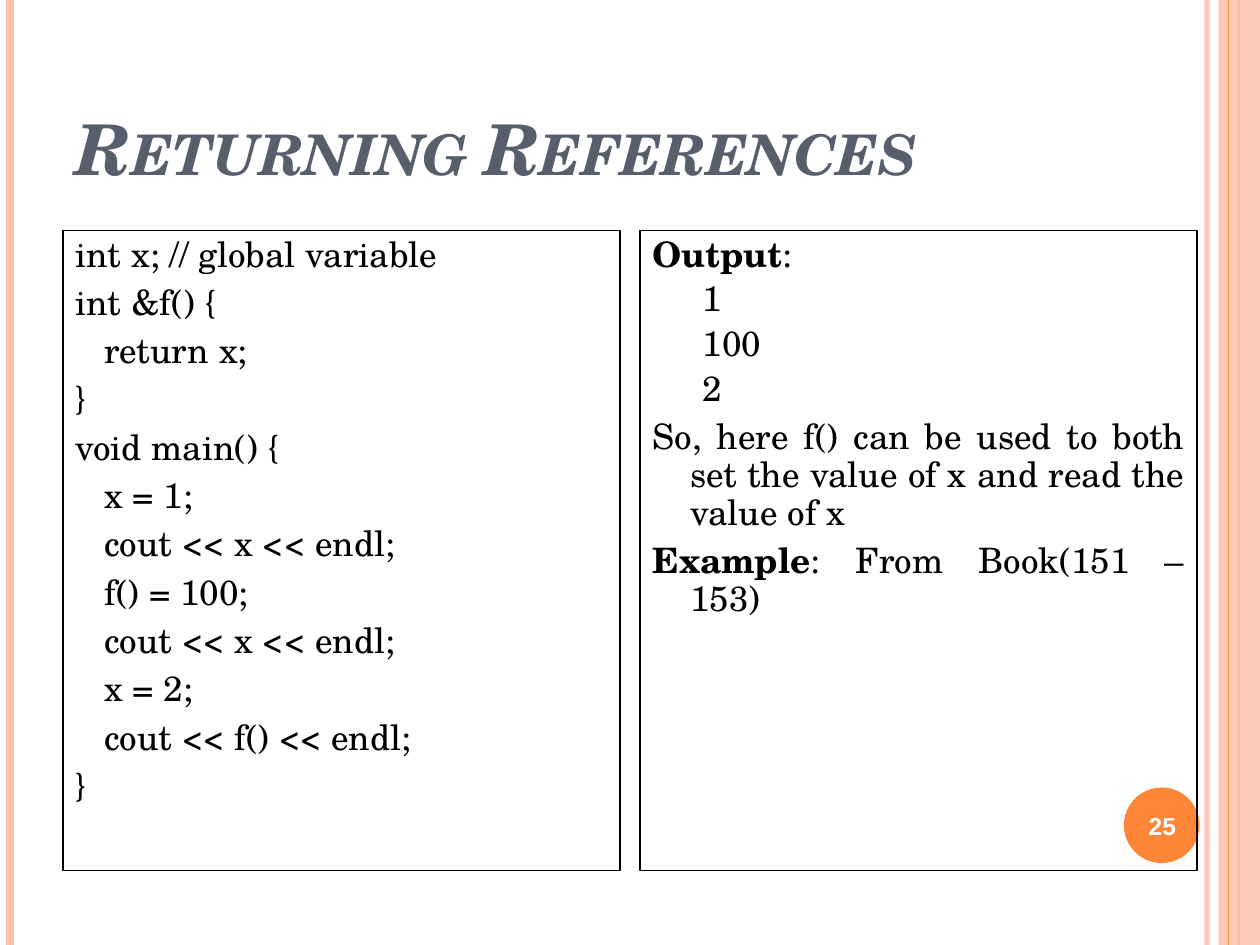
from dataclasses import dataclass

import pptx
import pptx.dml.color
import pptx.enum.shapes
import pptx.enum.text
import pptx.oxml.ns
import pptx.oxml.xmlchemy
import pptx.util
from lxml import etree

Inches = pptx.util.Inches
Pt = pptx.util.Pt
Align = pptx.enum.text.PP_ALIGN
Anchor = pptx.enum.text.MSO_ANCHOR
Shape = pptx.enum.shapes.MSO_SHAPE
qn = pptx.oxml.ns.qn


@dataclass(frozen=True)
class Theme:
    serif: str = "TeX Gyre Schola"
    sans: str = "Arial"
    ink: str = "000000"
    heading: str = "575F6D"
    accent: str = "FE8637"
    pale: str = "FEC3AE"
    white: str = "FFFFFF"
    title_size: int = 40
    body_size: int = 20
    number_size: int = 14


THEME = Theme()

HANGING = 0.3
CODE_STEP = 0.23
OUTPUT_STEP = 0.4

CODE = [
    (0, "int x; // global variable"),
    (0, "int &f() {"),
    (1, "return x;"),
    (0, "}"),
    (0, "void main() {"),
    (1, "x = 1;"),
    (1, "cout << x << endl;"),
    (1, "f() = 100;"),
    (1, "cout << x << endl;"),
    (1, "x = 2;"),
    (1, "cout << f() << endl;"),
    (0, "}"),
]
OUTPUT_VALUES = ["1", "100", "2"]
EXPLANATION = "So, here f() can be used to both set the value of x and read the value of x"


def rgb(color):
    return pptx.dml.color.RGBColor.from_string(color)


def set_opacity(fill_parent, percent):
    color = fill_parent.find(".//" + qn("a:srgbClr"))
    etree.SubElement(color, qn("a:alpha")).set("val", str(percent * 1000))


def add_run(paragraph, text, size, color, font=THEME.serif, bold=False, italic=False):
    run = paragraph.add_run()
    run.text = text
    run.font.name = font
    run.font.size = Pt(size)
    run.font.color.rgb = rgb(color)
    run.font.bold = bold
    run.font.italic = italic
    return run


def add_text_frame(slide, left, top, width, height, anchor):
    shape = slide.shapes.add_textbox(Inches(left), Inches(top), Inches(width), Inches(height))
    shape.text_frame.word_wrap = True
    shape.text_frame.vertical_anchor = anchor
    return shape


def add_filled_shape(slide, kind, left, top, width, height, color):
    shape = slide.shapes.add_shape(kind, Inches(left), Inches(top), Inches(width), Inches(height))
    shape.shadow.inherit = False
    shape.fill.solid()
    shape.fill.fore_color.rgb = rgb(color)
    shape.line.fill.background()
    return shape


def add_rail(slide, x, top, height, color, weight, opacity=100):
    rail = slide.shapes.add_connector(
        pptx.enum.shapes.MSO_CONNECTOR.STRAIGHT,
        Inches(x), Inches(top), Inches(x), Inches(top + height))
    rail.line.color.rgb = rgb(color)
    rail.line.width = Pt(weight)
    properties = rail._element.spPr
    if opacity < 100:
        set_opacity(properties, opacity)
    etree.SubElement(properties, qn("a:effectLst"))


def add_frame_rails(slide, left, top, width, height):
    right = left + width
    add_rail(slide, right - 0.42, top, height, THEME.pale, 3, 93)
    add_rail(slide, left + 0.08, top, height, THEME.pale, 4.5)
    add_rail(slide, right - 0.17, top, height, THEME.accent, 1.5)
    band = add_filled_shape(slide, Shape.RECTANGLE, right - 0.33, top, 0.33, height, THEME.pale)
    set_opacity(band._element.spPr, 87)
    add_rail(slide, right - 0.25, top, height, THEME.accent, 0.75)


def add_title(slide, left, top, width, height, text):
    box = add_text_frame(slide, left, top, width, height, Anchor.BOTTOM)
    run = add_run(box.text_frame.paragraphs[0], text, THEME.title_size, THEME.heading,
                  bold=True, italic=True)
    run.font._element.set("cap", "small")


def add_page_number(slide, left, top, size, number):
    add_filled_shape(slide, Shape.OVAL, left, top, size, size, THEME.accent)
    box = add_text_frame(slide, left - 0.03, top + 0.02, size + 0.07, size - 0.03, Anchor.MIDDLE)
    paragraph = box.text_frame.paragraphs[0]
    paragraph.alignment = Align.CENTER
    add_run(paragraph, number, THEME.number_size, THEME.white, THEME.sans, bold=True)


def add_panel(slide, left, top, width, height, lines):
    panel = add_text_frame(slide, left, top, width, height, Anchor.TOP)
    panel.line.color.rgb = rgb(THEME.ink)
    panel.line.width = Pt(0.75)
    frame = panel.text_frame
    for index, (start, space_before, runs) in enumerate(lines):
        paragraph = frame.add_paragraph() if index else frame.paragraphs[0]
        paragraph.alignment = Align.JUSTIFY
        paragraph.line_spacing = 0.9
        paragraph.space_before = Pt(space_before)
        properties = paragraph._p.get_or_add_pPr()
        properties.set("marL", str(Inches(start + HANGING)))
        properties.set("indent", str(Inches(-HANGING)))
        for text, bold in runs:
            add_run(paragraph, text, THEME.body_size, THEME.ink, bold=bold)


def build_slide(presentation):
    slide = presentation.slides.add_slide(presentation.slide_layouts[6])
    add_frame_rails(slide, 0, 0, 10, 7.5)
    add_page_number(slide, 8.92, 6.25, 0.6, "25")
    add_title(slide, 0.5, 0.3, 8.17, 1.25, "Returning References")

    code_lines = [(level * CODE_STEP, 6, [(text, False)]) for level, text in CODE]
    output_lines = [
        (0, 6, [("Output", True), (":", False)]),
        *[(OUTPUT_STEP, 4, [(value, False)]) for value in OUTPUT_VALUES],
        (0, 6, [(EXPLANATION, False)]),
        (0, 6, [("Example", True), (": From Book(151 – 153)", False)]),
    ]
    width, gap = 4.42, 0.16
    for column, lines in enumerate([code_lines, output_lines]):
        add_panel(slide, 0.5 + column * (width + gap), 1.83, width, 5.08, lines)


def main():
    presentation = pptx.Presentation()
    presentation.slide_width = Inches(10)
    presentation.slide_height = Inches(7.5)
    build_slide(presentation)
    presentation.save("out.pptx")


if __name__ == "__main__":
    main()
